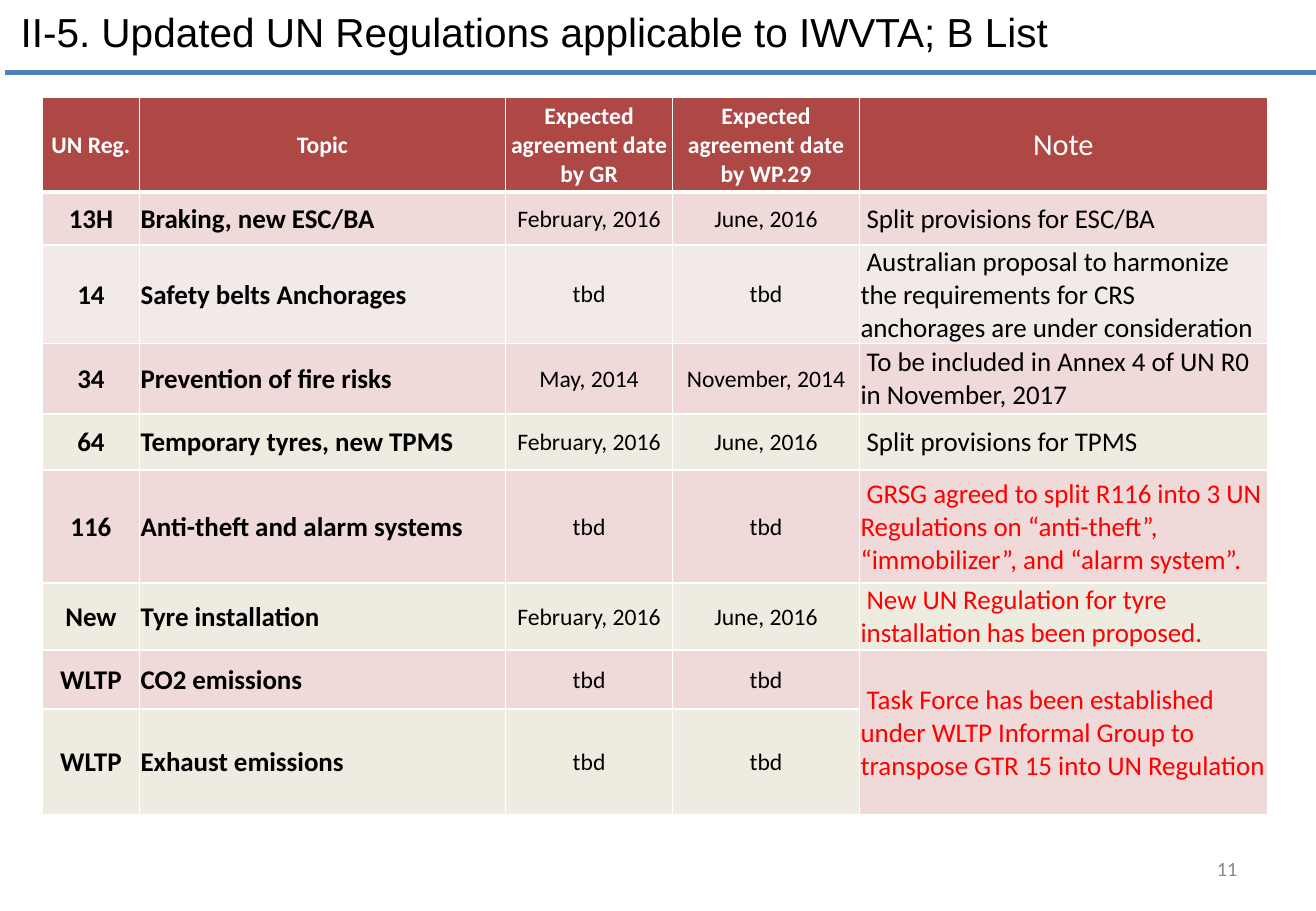
from lxml import etree
from pptx import Presentation
from pptx.dml.color import RGBColor
from pptx.enum import shapes, text
from pptx.oxml.ns import qn
from pptx.util import Pt

# Content
TITLE = " II-5. Updated UN Regulations applicable to IWVTA; B List"
PAGE_NUMBER = "11"
HEADER = ("UN Reg.", "Topic", "Expected agreement date by GR",
          "Expected agreement date by WP.29", "Note")
# Regulation, topic, date by GR, date by WP.29, note, note colour, band
REGULATIONS = [
    ("13H", "Braking, new ESC/BA", "February, 2016", "June, 2016",
     "Split provisions for ESC/BA", "ink", "rose"),
    ("14", "Safety belts Anchorages", "tbd", "tbd",
     "Australian proposal to harmonize the requirements for CRS "
     "anchorages are under consideration", "ink", "pale"),
    ("34", "Prevention of fire risks", "May, 2014", "November, 2014",
     "To be included in Annex 4 of UN R0 in November, 2017", "ink", "rose"),
    ("64", "Temporary tyres, new TPMS", "February, 2016", "June, 2016",
     "Split provisions for TPMS", "ink", "sand"),
    ("116", "Anti-theft and alarm systems", "tbd", "tbd",
     "GRSG agreed to split R116 into 3 UN Regulations on “anti-theft”, "
     "“immobilizer”, and “alarm system”.", "alert", "rose"),
    ("New", "Tyre installation", "February, 2016", "June, 2016",
     "New UN Regulation for tyre installation has been proposed.", "alert", "sand"),
    ("WLTP", "CO2 emissions", "tbd", "tbd",
     "Task Force has been established under WLTP Informal Group to "
     "transpose GTR 15 into UN Regulation", "alert", "rose"),
    ("WLTP", "Exhaust emissions", "tbd", "tbd", None, "alert", "sand"),
]

# Layout, in points
SLIDE_SIZE = (780, 540)
TITLE_BOX = (-1.5, 0.5, 778, 36)
RULE = (3, 43, 783, 43)
PAGE_BOX = (558.5, 500.5, 182, 28.5)
TABLE_ORIGIN = (25.2, 57.6)
COLUMN_WIDTHS = (57.4, 217, 99.2, 110.6, 241.8)
ROW_HEIGHTS = (56.3, 31.3, 57.2, 41.8, 33.3, 67, 39.7, 34.9, 63)
INSET = 0.75

THEME = {
    "title_font": "Arial", "body_font": "Calibri",
    "ink": "000000", "white": "FFFFFF", "alert": "FF0000", "muted": "898989",
    "rule": "4F81BD", "header": "AE4845",
    "rose": "F0D9D9", "pale": "F2E9E9", "sand": "EEECE1",
    "title_size": 24, "note_header_size": 18, "body_size": 16,
    "small_size": 14, "page_size": 12, "rule_width": 3,
    "border": 1, "header_border": 3,
}
CENTER, LEFT, RIGHT = text.PP_ALIGN.CENTER, text.PP_ALIGN.LEFT, text.PP_ALIGN.RIGHT
MIDDLE = text.MSO_ANCHOR.MIDDLE


def color(name):
    return RGBColor.from_string(THEME[name])


def add_text(frame, words, size, ink, align=LEFT, bold=False, font="body_font"):
    paragraph = frame.paragraphs[0]
    paragraph.alignment = align
    run = paragraph.add_run()
    run.text = words
    run.font.name = THEME[font]
    run.font.size = Pt(THEME[size])
    run.font.bold = bold
    run.font.color.rgb = color(ink)


def add_text_box(slide, box, anchor, *args, **kwargs):
    frame = slide.shapes.add_textbox(*map(Pt, box)).text_frame
    frame.word_wrap = True
    frame.vertical_anchor = anchor
    add_text(frame, *args, **kwargs)


def style_cell(cell, fill, top, bottom):
    properties = cell._tc.get_or_add_tcPr()
    widths = {"a:lnL": "border", "a:lnR": "border", "a:lnT": top, "a:lnB": bottom}
    for tag, width in widths.items():
        line = etree.SubElement(properties, qn(tag), w=str(Pt(THEME[width])))
        solid = etree.SubElement(line, qn("a:solidFill"))
        etree.SubElement(solid, qn("a:srgbClr"), val=THEME["white"])
    cell.fill.solid()
    cell.fill.fore_color.rgb = color(fill)
    cell.margin_left = cell.margin_top = cell.margin_right = Pt(INSET)
    cell.margin_bottom = 0
    cell.vertical_anchor = MIDDLE


def add_regulation_table(slide):
    frame = slide.shapes.add_table(
        len(ROW_HEIGHTS), len(COLUMN_WIDTHS), *map(Pt, TABLE_ORIGIN),
        Pt(sum(COLUMN_WIDTHS)), Pt(sum(ROW_HEIGHTS)))
    table = frame.table
    for column, width in zip(table.columns, COLUMN_WIDTHS):
        column.width = Pt(width)
    for row, height in zip(table.rows, ROW_HEIGHTS):
        row.height = Pt(height)

    # Header row
    note_column = len(HEADER) - 1
    for index, label in enumerate(HEADER):
        cell = table.cell(0, index)
        style_cell(cell, "header", "border", "header_border")
        is_note = index == note_column
        add_text(cell.text_frame, label, "note_header_size" if is_note else "small_size",
                 "white", CENTER, bold=not is_note)

    # Regulation rows: size, alignment and weight by column
    formats = (("body_size", CENTER, True), ("body_size", LEFT, True),
               ("small_size", CENTER, False), ("small_size", CENTER, False))
    for index, (*facts, note, note_ink, band) in enumerate(REGULATIONS, start=1):
        top = "header_border" if index == 1 else "border"
        for cell in table.rows[index].cells:
            style_cell(cell, band, top, "border")
        for column, (fact, (size, align, bold)) in enumerate(zip(facts, formats)):
            add_text(table.cell(index, column).text_frame, fact, size, "ink", align, bold)
        note_cell = table.cell(index, note_column)
        if note is None:
            table.cell(index - 1, note_column).merge(note_cell)
        else:
            add_text(note_cell.text_frame, " " + note, "body_size", note_ink)


def main():
    presentation = Presentation()
    presentation.slide_width, presentation.slide_height = map(Pt, SLIDE_SIZE)
    slide = presentation.slides.add_slide(presentation.slide_layouts[6])

    # Rule under the title
    rule = slide.shapes.add_connector(shapes.MSO_CONNECTOR.STRAIGHT, *map(Pt, RULE))
    rule.line.color.rgb = color("rule")
    rule.line.width = Pt(THEME["rule_width"])
    etree.SubElement(rule._element.spPr, qn("a:effectLst"))

    # Title, page number and table
    add_text_box(slide, TITLE_BOX, text.MSO_ANCHOR.TOP, TITLE, "title_size", "ink",
                 font="title_font")
    add_text_box(slide, PAGE_BOX, MIDDLE, PAGE_NUMBER, "page_size", "muted", RIGHT)
    add_regulation_table(slide)
    presentation.save("out.pptx")


if __name__ == "__main__":
    main()
